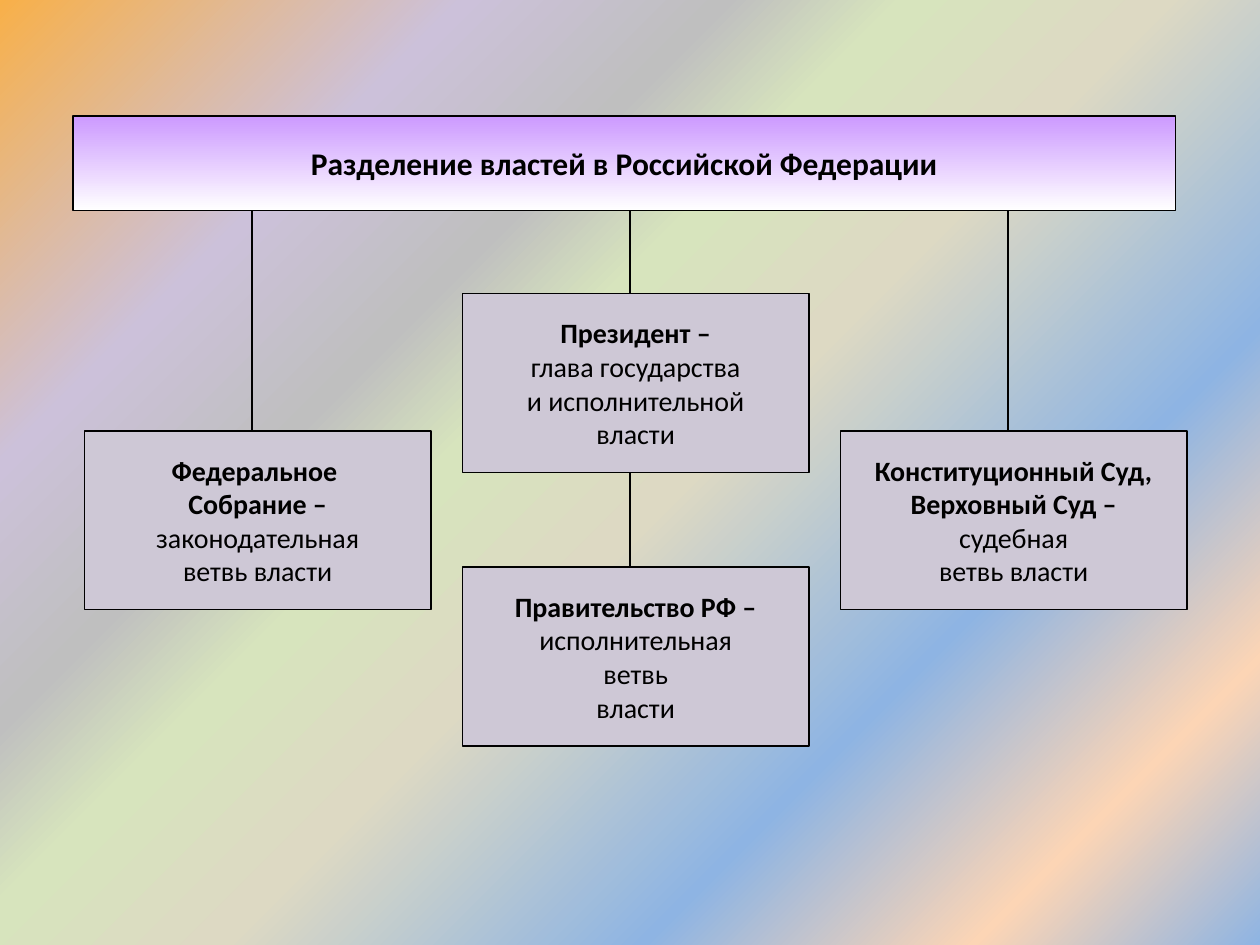
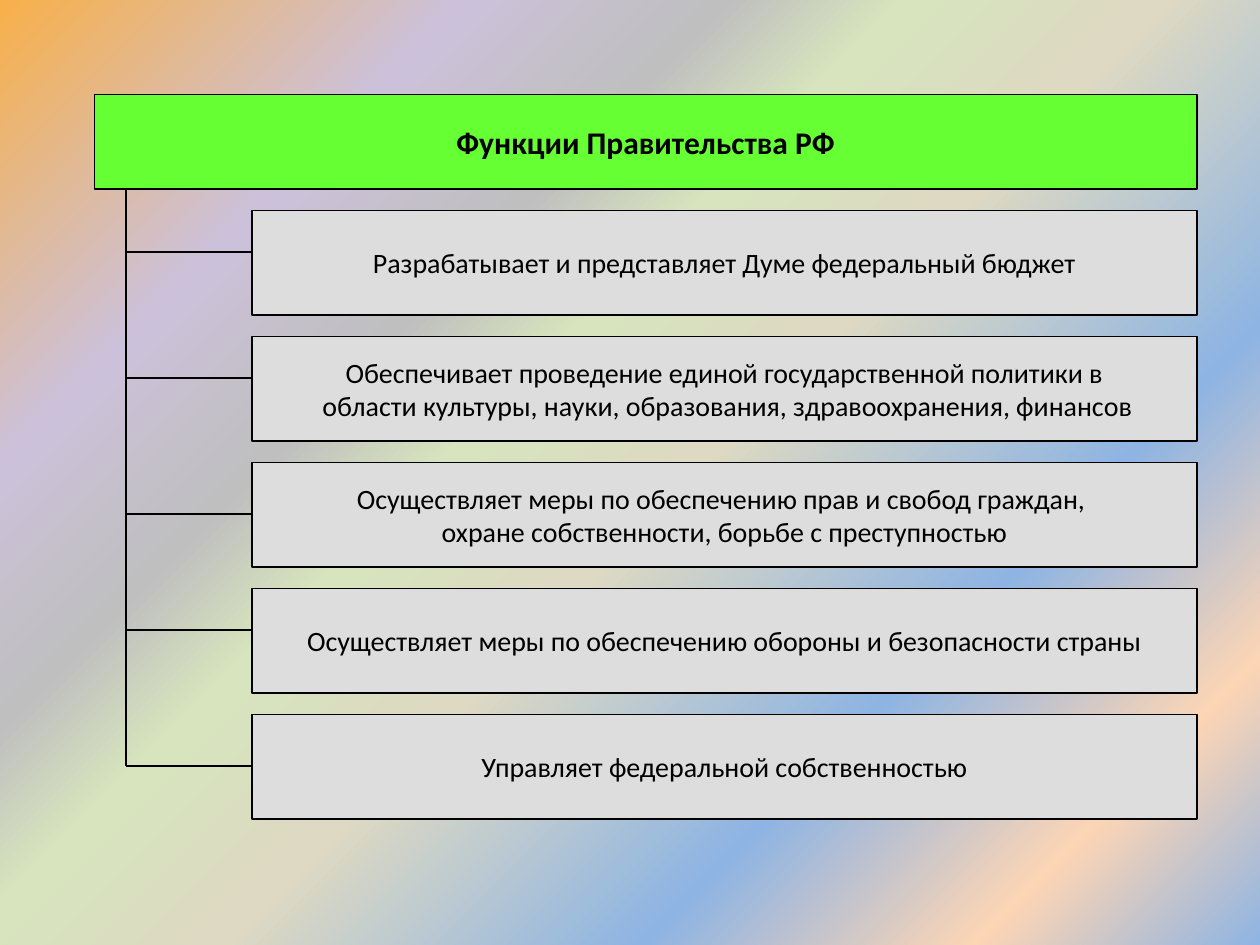
"""Build two diagram slides on the separation of powers and the functions of the government."""

from dataclasses import dataclass

import lxml.etree
import pptx
import pptx.dml.color
import pptx.enum.shapes
import pptx.enum.text
import pptx.oxml
import pptx.oxml.ns
import pptx.presentation
import pptx.shapes.base
import pptx.slide
import pptx.util
from pptx.dml.color import RGBColor
from pptx.util import Inches

BLACK = RGBColor(0x00, 0x00, 0x00)
WHITE = RGBColor(0xFF, 0xFF, 0xFF)
VIOLET = RGBColor(0xCC, 0x99, 0xFF)
GREEN = RGBColor(0x66, 0xFF, 0x33)
LILAC = RGBColor(0xCE, 0xC8, 0xD6)
GRAY = RGBColor(0xDD, 0xDD, 0xDD)
BACKGROUND_STOPS = (
    (0, RGBColor(0x8E, 0xB4, 0xE3)),
    (13, RGBColor(0xFC, 0xD5, 0xB5)),
    (28, RGBColor(0x8E, 0xB4, 0xE3)),
    (47, RGBColor(0xDD, 0xD9, 0xC3)),
    (59, RGBColor(0xD7, 0xE4, 0xBD)),
    (67, RGBColor(0xBF, 0xBF, 0xBF)),
    (79, RGBColor(0xCC, 0xC1, 0xDA)),
    (100, RGBColor(0xF8, 0xB0, 0x49)),
)

FONT = "Calibri"
TITLE_SIZE = 18
BODY_SIZE = 16
LINE_WIDTH = pptx.util.Pt(0.75)
TITLE_ONLY_LAYOUT = 5


@dataclass(frozen=True)
class Box:
    left: float
    top: float
    width: float
    height: float
    text: str
    color: RGBColor
    bold_lines: int = 0
    size: int = BODY_SIZE


@dataclass(frozen=True)
class Line:
    x1: float
    y1: float
    x2: float
    y2: float


def set_background(presentation: pptx.presentation.Presentation) -> None:
    """Give the slide master a gradient that spreads from the lower right corner."""
    master = presentation.slide_master
    master.background.fill.solid()
    properties = master.element.find(".//" + pptx.oxml.ns.qn("p:bgPr"))
    stops = "".join(
        f'<a:gs pos="{position * 1000}"><a:srgbClr val="{color}"/></a:gs>'
        for position, color in BACKGROUND_STOPS
    )
    gradient = pptx.oxml.parse_xml(
        f'<a:gradFill {pptx.oxml.ns.nsdecls("a")} rotWithShape="1"><a:gsLst>{stops}</a:gsLst>'
        '<a:path path="circle"><a:fillToRect l="100000" t="100000"/></a:path>'
        '<a:tileRect r="-100000" b="-100000"/></a:gradFill>'
    )
    properties.replace(properties[0], gradient)


def format_box(shape: pptx.shapes.base.BaseShape, box: Box) -> None:
    """Apply the place, fill, outline and text of a box."""
    shape.left, shape.top = Inches(box.left), Inches(box.top)
    shape.width, shape.height = Inches(box.width), Inches(box.height)
    shape.fill.solid()
    shape.fill.fore_color.rgb = box.color
    shape.line.color.rgb = BLACK
    shape.line.width = LINE_WIDTH
    text_frame = shape.text_frame
    text_frame.text = box.text
    text_frame.word_wrap = False
    text_frame.auto_size = pptx.enum.text.MSO_AUTO_SIZE.NONE
    text_frame.vertical_anchor = pptx.enum.text.MSO_ANCHOR.MIDDLE
    for index, paragraph in enumerate(text_frame.paragraphs):
        paragraph.alignment = pptx.enum.text.PP_ALIGN.CENTER
        for run in paragraph.runs:
            run.font.name = FONT
            run.font.size = pptx.util.Pt(box.size)
            run.font.bold = index < box.bold_lines
            run.font.color.rgb = BLACK


def add_box(slide: pptx.slide.Slide, box: Box) -> None:
    """Add a rectangle with centred text."""
    shape = slide.shapes.add_shape(pptx.enum.shapes.MSO_SHAPE.RECTANGLE, 0, 0, 0, 0)
    shape.shadow.inherit = False
    format_box(shape, box)


def add_line(slide: pptx.slide.Slide, line: Line) -> None:
    """Add a thin black connector without a shadow."""
    connector = slide.shapes.add_connector(
        pptx.enum.shapes.MSO_CONNECTOR.STRAIGHT,
        Inches(line.x1), Inches(line.y1), Inches(line.x2), Inches(line.y2),
    )
    connector.line.color.rgb = BLACK
    connector.line.width = LINE_WIDTH
    lxml.etree.SubElement(connector.element.spPr, pptx.oxml.ns.qn("a:effectLst"))


def add_diagram(
    presentation: pptx.presentation.Presentation,
    title: Box,
    lines: list[Line],
    boxes: list[Box],
) -> pptx.slide.Slide:
    """Add a slide with a title band, connectors and boxes."""
    slide = presentation.slides.add_slide(presentation.slide_layouts[TITLE_ONLY_LAYOUT])
    format_box(slide.shapes.title, title)
    for line in lines:
        add_line(slide, line)
    for box in boxes:
        add_box(slide, box)
    return slide


def title_band(left: float, top: float, text: str, color: RGBColor) -> Box:
    """Describe the title band of a slide."""
    return Box(left, top, 8.75, 0.75, text, color, bold_lines=1, size=TITLE_SIZE)


def build_powers_slide(presentation: pptx.presentation.Presentation) -> None:
    """Show the branches of power below their title."""
    title = title_band(0.58, 0.92, "Разделение властей в Российской Федерации", VIOLET)
    title_bottom, side_top, president_top, government_top = 1.67, 3.42, 2.33, 4.5
    left_column, middle_column, right_column = 2, 5, 8
    box_width, box_height, column_offset = 2.75, 1.42, 1.33
    branches = (
        (left_column, side_top, 2,
         "Федеральное \nСобрание –\nзаконодательная\nветвь власти"),
        (middle_column, president_top, 1,
         "Президент –\nглава государства\nи исполнительной\nвласти"),
        (middle_column, government_top, 1,
         "Правительство РФ –\nисполнительная\nветвь\nвласти"),
        (right_column, side_top, 2,
         "Конституционный Суд,\nВерховный Суд –\nсудебная\nветвь власти"),
    )
    boxes = [
        Box(column - column_offset, top, box_width, box_height, text, LILAC, bold_lines)
        for column, top, bold_lines, text in branches
    ]
    drops = (
        (left_column, title_bottom, side_top),
        (middle_column, title_bottom, president_top),
        (right_column, title_bottom, side_top),
        (middle_column, president_top + box_height, government_top),
    )
    lines = [Line(column, top, column, bottom) for column, top, bottom in drops]
    slide = add_diagram(presentation, title, lines, boxes)
    fill = slide.shapes.title.fill
    fill.gradient()
    fill.gradient_angle = 270
    for stop, position, color in zip(fill.gradient_stops, (0, 1), (VIOLET, WHITE)):
        stop.position = position
        stop.color.rgb = color


def build_functions_slide(presentation: pptx.presentation.Presentation) -> None:
    """List the functions of the government as branches of one trunk."""
    title = title_band(0.75, 0.75, "Функции Правительства РФ", GREEN)
    functions = (
        "Разрабатывает и представляет Думе федеральный бюджет",
        "Обеспечивает проведение единой государственной политики в\n"
        " области культуры, науки, образования, здравоохранения, финансов",
        "Осуществляет меры по обеспечению прав и свобод граждан, \n"
        "охране собственности, борьбе с преступностью",
        "Осуществляет меры по обеспечению обороны и безопасности страны",
        "Управляет федеральной собственностью",
    )
    trunk_x, box_left, first_top, row_step = 1, 2, 1.67, 1
    branch_levels = (2, 3, 4.08, 5, 6.08)
    boxes = [
        Box(box_left, first_top + row * row_step, 7.5, 0.83, text, GRAY)
        for row, text in enumerate(functions)
    ]
    trunk = Line(trunk_x, title.top + title.height, trunk_x, branch_levels[-1])
    branches = [Line(trunk_x, level, box_left, level) for level in branch_levels]
    add_diagram(presentation, title, [trunk, *branches], boxes)


def main() -> None:
    """Build and save the presentation."""
    presentation = pptx.Presentation()
    presentation.slide_width = Inches(10)
    presentation.slide_height = Inches(7.5)
    set_background(presentation)
    build_powers_slide(presentation)
    build_functions_slide(presentation)
    presentation.save("out.pptx")


if __name__ == "__main__":
    main()
